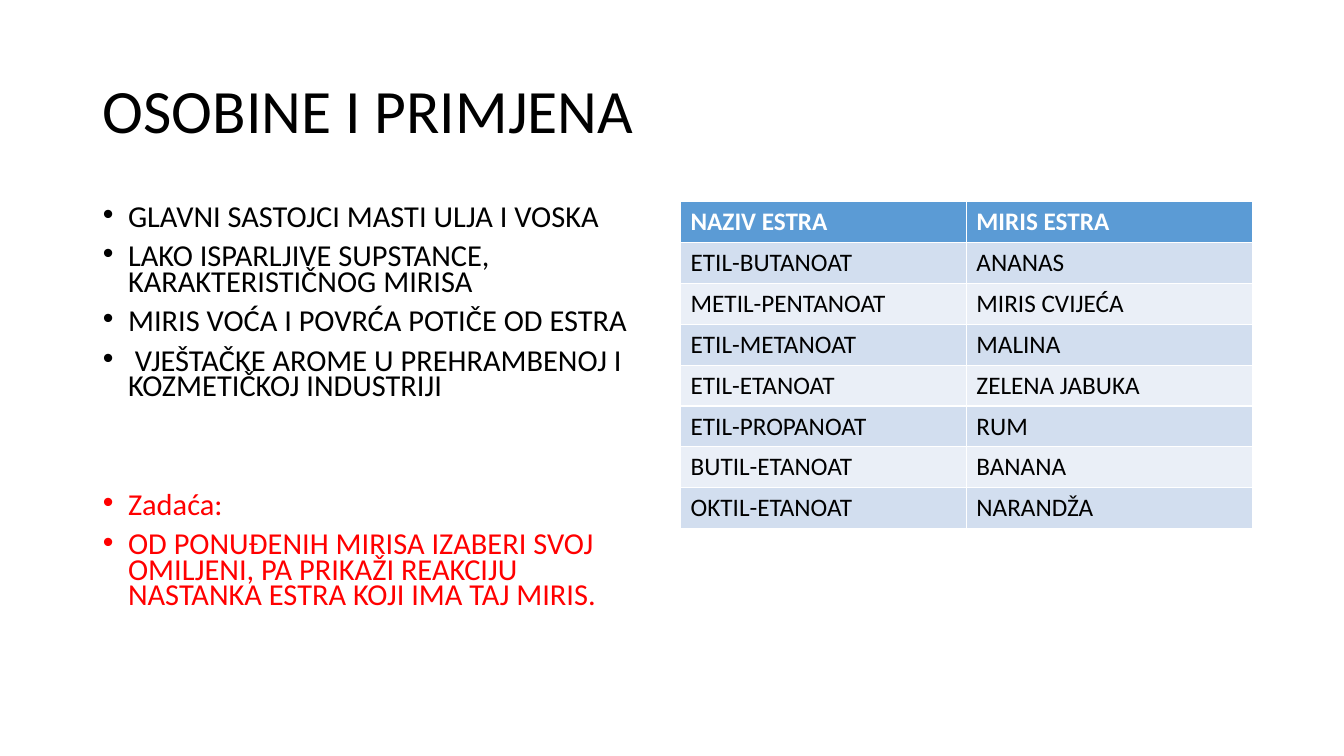
from pptx import Presentation
from pptx.dml.color import RGBColor
from pptx.enum.text import MSO_ANCHOR, MSO_AUTO_SIZE, PP_ALIGN
from pptx.util import Inches, Pt


def add_run(paragraph, text, size, color, bold=False):
    run = paragraph.add_run()
    run.text = text
    run.font.name = "Calibri"
    run.font.size = Pt(size)
    run.font.bold = bold
    run.font.color.rgb = RGBColor.from_string(color)


def place(shape, left, top, width, height):
    shape.left, shape.top = Inches(left), Inches(top)
    shape.width, shape.height = Inches(width), Inches(height)


BLACK, WHITE, RED = "000000", "FFFFFF", "FF0000"
HEADER_BLUE, BAND_DARK, BAND_LIGHT = "5B9BD5", "D2DEEF", "EAEFF7"

prs = Presentation()
prs.slide_width, prs.slide_height = Inches(13.33), Inches(7.5)
slide = prs.slides.add_slide(prs.slide_layouts[1])

# Title
title = slide.shapes.title
place(title, 0.92, 0.4, 11.5, 1.45)
title.text_frame.vertical_anchor = MSO_ANCHOR.MIDDLE
title.text_frame.auto_size = MSO_AUTO_SIZE.NONE
heading = title.text_frame.paragraphs[0]
heading.alignment = PP_ALIGN.LEFT
heading.line_spacing = 0.9
add_run(heading, "OSOBINE I PRIMJENA", 44, BLACK)

# Properties and homework: text, colour, space before in points
points = [
    ("GLAVNI SASTOJCI MASTI ULJA I VOSKA", BLACK, 10),
    ("LAKO ISPARLJIVE SUPSTANCE, KARAKTERISTIČNOG MIRISA", BLACK, 10),
    ("MIRIS VOĆA I POVRĆA POTIČE OD ESTRA", BLACK, 10),
    (" VJEŠTAČKE AROME U PREHRAMBENOJ I KOZMETIČKOJ INDUSTRIJI", BLACK, 10),
    ("Zadaća:", RED, 66.5),
    ("OD PONUĐENIH MIRISA IZABERI SVOJ OMILJENI, PA PRIKAŽI REAKCIJU "
     "NASTANKA ESTRA KOJI IMA TAJ MIRIS.", RED, 10),
]
properties = slide.placeholders[1]
place(properties, 0.92, 2, 5.67, 4.76)
frame = properties.text_frame
frame.auto_size = MSO_AUTO_SIZE.NONE
for i, (text, color, space_before) in enumerate(points):
    point = frame.paragraphs[0] if i == 0 else frame.add_paragraph()
    point.line_spacing = 0.7
    point.space_before = Pt(space_before)
    indents = point._p.get_or_add_pPr()
    indents.set("marL", str(Inches(0.25)))
    indents.set("indent", str(Inches(-0.25)))
    add_run(point, text, 21.7, color)

# Esters and their scents
esters = [
    ("NAZIV ESTRA", "MIRIS ESTRA"),
    ("ETIL-BUTANOAT", "ANANAS"),
    ("METIL-PENTANOAT", "MIRIS CVIJEĆA"),
    ("ETIL-METANOAT", "MALINA"),
    ("ETIL-ETANOAT", "ZELENA JABUKA"),
    ("ETIL-PROPANOAT", "RUM"),
    ("BUTIL-ETANOAT", "BANANA"),
    ("OKTIL-ETANOAT", "NARANDŽA"),
]
scents = slide.shapes.add_table(
    len(esters), 2, Inches(6.75), Inches(2), Inches(5.67), Inches(3.24)
).table
for r, ester in enumerate(esters):
    is_header = r == 0
    band = HEADER_BLUE if is_header else BAND_DARK if r % 2 else BAND_LIGHT
    for c, text in enumerate(ester):
        cell = scents.cell(r, c)
        cell.fill.solid()
        cell.fill.fore_color.rgb = RGBColor.from_string(band)
        add_run(cell.text_frame.paragraphs[0], text, 18,
                WHITE if is_header else BLACK, is_header)

prs.save("out.pptx")
